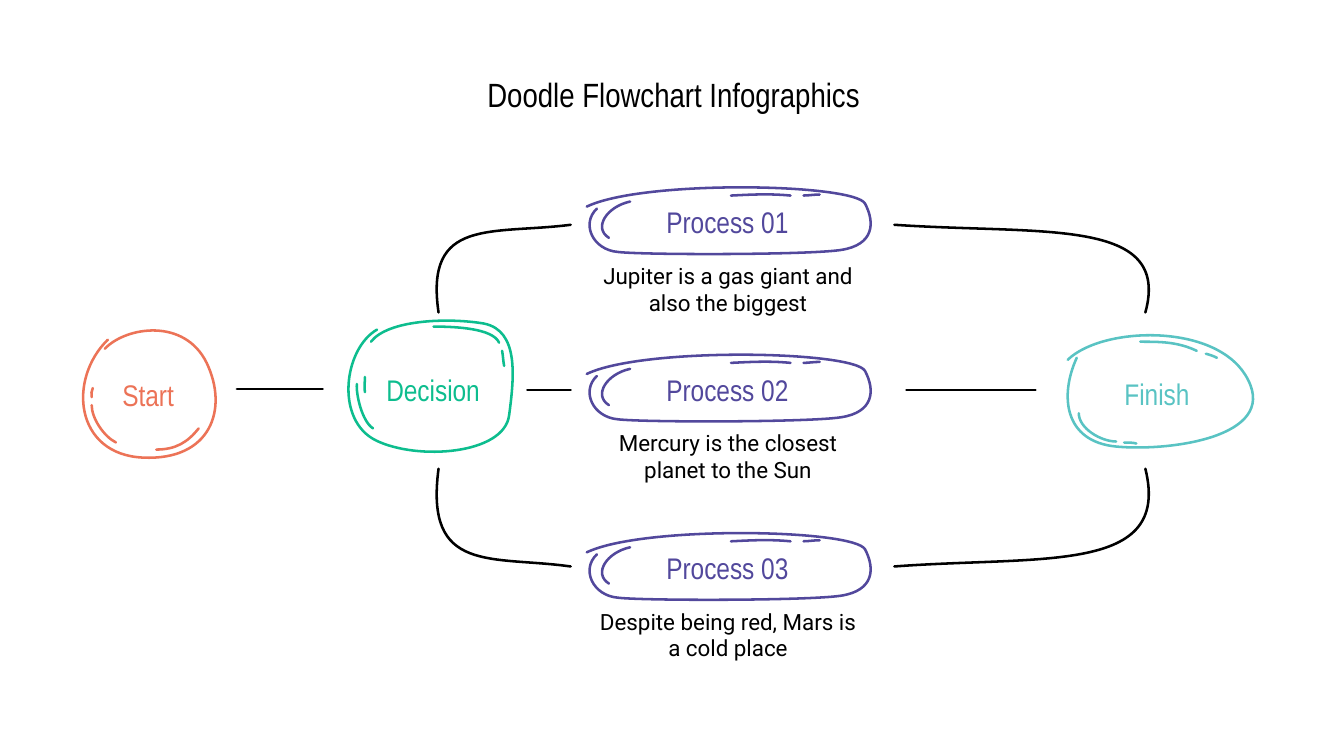
from lxml import etree
from pptx import Presentation
from pptx.dml.color import RGBColor
from pptx.enum.shapes import MSO_CONNECTOR
from pptx.enum.text import MSO_ANCHOR, PP_ALIGN
from pptx.oxml.ns import qn
from pptx.util import Inches, Pt

STRAIGHT = MSO_CONNECTOR.STRAIGHT
MIDDLE = MSO_ANCHOR.MIDDLE
CENTER = PP_ALIGN.CENTER

HEADING_FONT, BODY_FONT = "Arial Narrow", "Roboto"
BLACK, CORAL, GREEN = "000000", "EC7357", "0DBD8E"
PURPLE, TEAL = "52489C", "59C3C3"
LINE_WIDTH = 1.82
TITLE_ONLY = 5

# Each stroke: a start point, then three points for every cubic curve,
# in inches from the left top corner of its box
START_STROKES = [
    [(.4, .22), (0, .61), (.07, 1.36), (.75, 1.39), (1.42, 1.42), (1.6, .91),
     (1.38, .45), (1.16, 0), (.58, .09), (.37, .31)],
    [(.24, .87), (.24, 1), (.36, 1.18), (.48, 1.24)],
    [(.25, .7), (.24, .73), (.23, .76), (.24, .79)],
    [(.88, 1.31), (1.07, 1.31), (1.19, 1.24), (1.3, 1.1)],
]
DECISION_STROKES = [
    [(.42, .12), (.09, .31), (0, 1.02), (.41, 1.22), (.82, 1.42), (1.68, 1.36),
     (1.73, .97), (1.78, .59), (1.83, .13), (1.48, .06), (1.13, 0), (.53, .02),
     (.36, .24)],
    [(.98, .09), (1.21, .09), (1.57, .11), (1.63, .25)],
    [(1.66, .33), (1.67, .38), (1.67, .43), (1.68, .48)],
    [(.22, .66), (.21, .76), (.27, 1.03), (.38, 1.1)],
    [(.3, .59), (.3, .64), (.29, .69), (.3, .74)],
]
PROCESS_STROKES = [
    [(.16, .29), (0, .44), (.12, .7), (.37, .72), (.62, .75), (2.25, .75),
     (2.58, .7), (2.91, .65), (2.92, .43), (2.82, .24), (2.71, .04), (.62, 0),
     (.06, .27)],
    [(1.49, .16), (1.69, .15), (1.88, .14), (2.08, .16)],
    [(2.21, .16), (2.26, .16), (2.31, .15), (2.37, .15)],
    [(.49, .22), (.26, .27), (.12, .48), (.28, .58)],
]
FINISH_STROKES = [
    [(.17, .35), (0, .72), (.04, 1.18), (.56, 1.23), (1.08, 1.28), (2.16, 1.14),
     (1.87, .57), (1.59, 0), (.43, .03), (.08, .37)],
    [(.19, .9), (.19, 1.05), (.41, 1.18), (.56, 1.18)],
    [(.64, 1.19), (.68, 1.19), (.73, 1.19), (.76, 1.2)],
    [(.8, .19), (1, .19), (1.17, .19), (1.36, .28)],
    [(1.45, .31), (1.49, .32), (1.52, .33), (1.56, .35)],
]

PROCESSES = [
    (1.78, "Process 01", "Jupiter is a gas giant and also the biggest"),
    (3.44, "Process 02", "Mercury is the closest planet to the Sun"),
    (5.21, "Process 03", "Despite being red, Mars is a cold place"),
]
STRAIGHT_LINKS = [(2.35, 3.2, 3.86), (5.23, 5.66, 3.87), (8.99, 10.27, 3.87)]
LINK_COLUMNS = [(4.35, 4.21, 4.88, 5.66), (11.36, 11.62, 10.34, 8.87)]
LINK_ROWS = [(3.1, 2.15, 2.33, 2.23), (4.65, 5.7, 5.51, 5.62)]


def color(value):
    return RGBColor.from_string(value)


def write_text(shape, text, size, font, fill):
    frame = shape.text_frame
    frame.word_wrap = True
    frame.vertical_anchor = MIDDLE
    frame.margin_left = frame.margin_right = Inches(0.13)
    frame.margin_top = frame.margin_bottom = Inches(0.13)
    paragraph = frame.paragraphs[0]
    paragraph.alignment = CENTER
    run = paragraph.add_run()
    run.text = text
    run.font.size = Pt(size)
    run.font.name = font
    run.font.color.rgb = color(fill)


def add_text(shapes, box, text, **text_format):
    write_text(shapes.add_textbox(*map(Inches, box)), text, **text_format)


def style_line(shape, stroke_color):
    shape.line.color.rgb = color(stroke_color)
    shape.line.width = Pt(LINE_WIDTH)
    shape.element.spPr.find(qn("a:ln")).set("cap", "rnd")


def bend_segments(shape):
    """Turn every three line segments of a freeform into one cubic curve."""
    segments = list(shape.element.iter(qn("a:lnTo")))
    for first in range(0, len(segments), 3):
        curve = etree.Element(qn("a:cubicBezTo"))
        segments[first].addprevious(curve)
        for segment in segments[first:first + 3]:
            curve.append(segment[0])
            segment.getparent().remove(segment)


def add_stroke(shapes, left, top, points, stroke_color):
    outline = [(Inches(left + x), Inches(top + y)) for x, y in points]
    builder = shapes.build_freeform(*outline[0])
    builder.add_line_segments(outline[1:], close=False)
    shape = builder.convert_to_shape()
    bend_segments(shape)
    shape.shadow.inherit = False
    shape.fill.background()
    style_line(shape, stroke_color)


def add_node(slide, left, top, strokes, label, label_box, node_color):
    """Draw one doodle outline with its label; label_box is relative to it."""
    shapes = slide.shapes.add_group_shape().shapes
    for points in strokes:
        add_stroke(shapes, left, top, points, node_color)
    x, y, width, height = label_box
    add_text(shapes, (left + x, top + y, width, height), label,
             size=21.3, font=HEADING_FONT, fill=node_color)


def add_process(slide, left, top, label, caption):
    add_node(slide, left, top, PROCESS_STROKES, label, (.44, .2, 2.03, .44), PURPLE)
    add_text(slide.shapes, (left, top + 0.75, 2.92, 0.67), caption,
             size=16, font=BODY_FONT, fill=BLACK)


def add_links(slide):
    for start, end, y in STRAIGHT_LINKS:
        connector = slide.shapes.add_connector(
            STRAIGHT, Inches(start), Inches(y), Inches(end), Inches(y))
        style_line(connector, BLACK)
        etree.SubElement(connector.element.spPr, qn("a:effectLst"))
    for column in LINK_COLUMNS:
        for row in LINK_ROWS:
            add_stroke(slide.shapes, 0, 0, list(zip(column, row)), BLACK)


def add_title(slide, left, top, width, height):
    title = slide.shapes.title
    title.left, title.top = Inches(left), Inches(top)
    title.width, title.height = Inches(width), Inches(height)
    write_text(title, "Doodle Flowchart Infographics",
               size=24, font=HEADING_FONT, fill=BLACK)
    title.text_frame.margin_right = Inches(0.11)


def main():
    presentation = Presentation()
    presentation.slide_width = Inches(13.33)
    presentation.slide_height = Inches(7.5)
    slide = presentation.slides.add_slide(presentation.slide_layouts[TITLE_ONLY])

    add_title(slide, 0.67, 0.6, 12, 0.67)

    # Flow from left to right
    add_node(slide, 0.67, 3.15, START_STROKES, "Start", (.3, .54, 1, .44), CORAL)
    add_node(slide, 3.32, 3.15, DECISION_STROKES, "Decision", (.27, .49, 1.41, .44), GREEN)
    for top, label, caption in PROCESSES:
        add_process(slide, 5.76, top, label, caption)
    add_node(slide, 10.51, 3.2, FINISH_STROKES, "Finish", (.26, .48, 1.41, .44), TEAL)
    add_links(slide)

    presentation.save("out.pptx")


if __name__ == "__main__":
    main()
